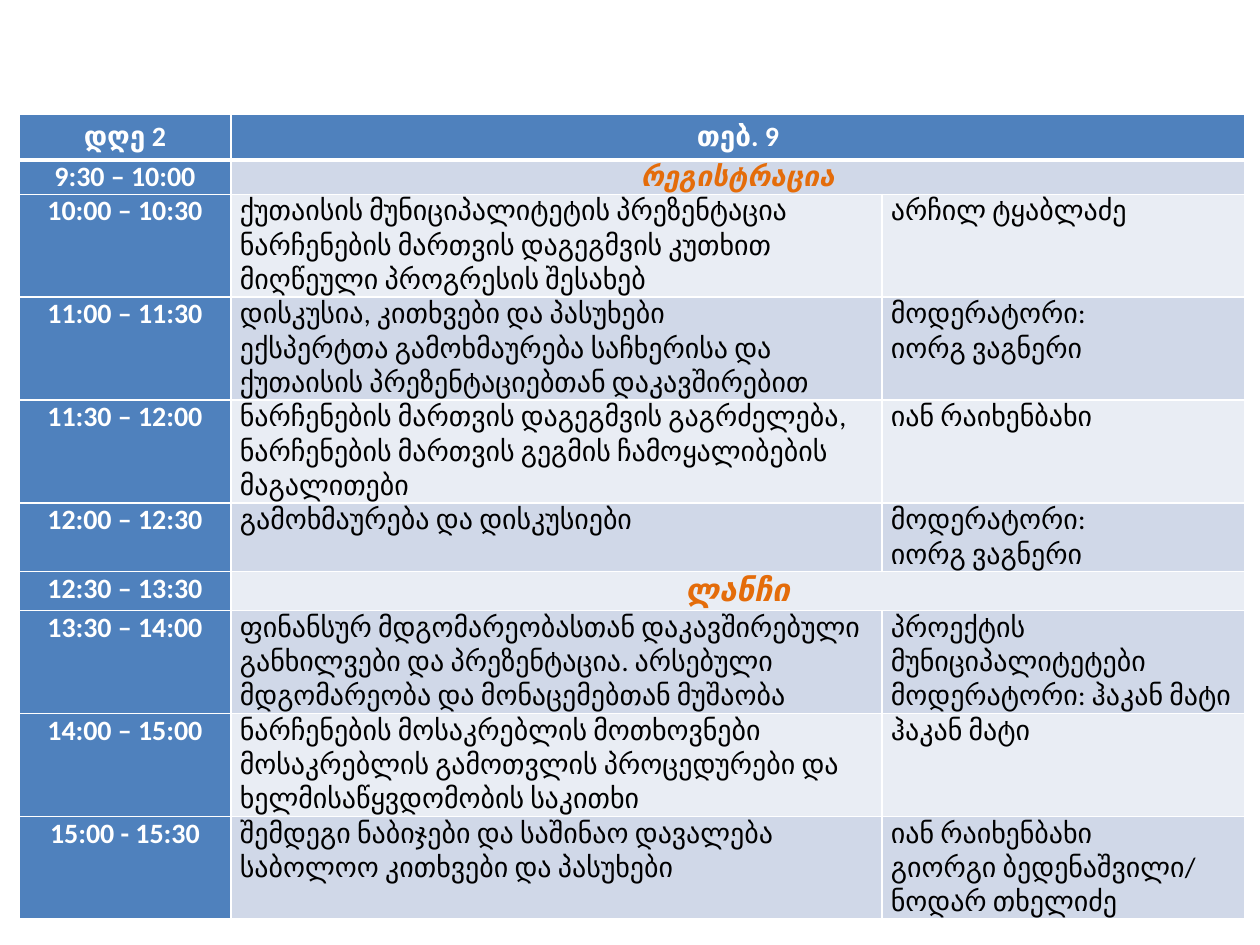
from lxml.etree import SubElement
from pptx import Presentation
from pptx.dml.color import RGBColor
from pptx.enum.text import MSO_ANCHOR, PP_ALIGN
from pptx.oxml.ns import qn
from pptx.util import Emu, Pt

PX = 914400 // 126
COLORS = {
    "header": "4F81BD",
    "odd": "D0D8E8",
    "even": "E9EDF4",
    "white": "FFFFFF",
    "black": "000000",
    "break": "E46C0A",
}
COLUMN_WIDTHS = [212, 651, 363]
HEADER = ("დღე 2", "თებ. 9")
# Row height, time, topic, speaker; a break has no speaker.
AGENDA = [
    (34, "9:30 – 10:00", "რეგისტრაცია", None),
    (103, "10:00 – 10:30",
     "ქუთაისის მუნიციპალიტეტის პრეზენტაცია ნარჩენების მართვის დაგეგმვის კუთხით "
     "მიღწეული პროგრესის შესახებ", "არჩილ ტყაბლაძე"),
    (103, "11:00 – 11:30",
     "დისკუსია, კითხვები და პასუხები\n"
     "ექსპერტთა გამოხმაურება საჩხერისა და ქუთაისის პრეზენტაციებთან დაკავშირებით",
     "მოდერატორი:\nიორგ ვაგნერი"),
    (103, "11:30 – 12:00",
     "ნარჩენების მართვის დაგეგმვის გაგრძელება, ნარჩენების მართვის გეგმის "
     "ჩამოყალიბების მაგალითები", "იან რაიხენბახი"),
    (68, "12:00 – 12:30", "გამოხმაურება და დისკუსიები",
     "მოდერატორი: \vიორგ ვაგნერი"),
    (39, "12:30 – 13:30", "ლანჩი", None),
    (102, "13:30 – 14:00",
     "ფინანსურ მდგომარეობასთან დაკავშირებული განხილვები და პრეზენტაცია. არსებული "
     "მდგომარეობა და მონაცემებთან მუშაობა",
     "პროექტის მუნიციპალიტეტები\vმოდერატორი: ჰაკან მატი"),
    (103, "14:00 – 15:00",
     "ნარჩენების მოსაკრებლის მოთხოვნები მოსაკრებლის გამოთვლის პროცედურები და "
     "ხელმისაწყვდომობის საკითხი", "ჰაკან მატი"),
    (102, "15:00 - 15:30",
     "შემდეგი ნაბიჯები და საშინაო დავალება\nსაბოლოო კითხვები და პასუხები",
     "იან რაიხენბახი\nგიორგი ბედენაშვილი/ ნოდარ თხელიძე"),
]


def rgb(name):
    return RGBColor.from_string(COLORS[name])


class AgendaPage:
    font = "Calibri"
    size = 16

    def __init__(self, page):
        self.page = page

    def table(self, left, top, widths, heights):
        frame = self.page.shapes.add_table(
            len(heights), len(widths), Emu(left * PX), Emu(top * PX),
            Emu(sum(widths) * PX), Emu(sum(heights) * PX))
        for column, width in zip(frame.table.columns, widths):
            column.width = Emu(width * PX)
        for row, height in zip(frame.table.rows, heights):
            row.height = Emu(height * PX)
        return frame.table

    def borders(self, cell, bottom):
        """Must run before the fill, which follows the lines in the cell XML."""
        properties = cell._tc.get_or_add_tcPr()
        for side, width in (("L", 1), ("R", 1), ("T", 1), ("B", bottom)):
            line = SubElement(properties, qn(f"a:ln{side}"), w=str(Pt(width)))
            fill = SubElement(line, qn("a:solidFill"))
            SubElement(fill, qn("a:srgbClr"), val=COLORS["white"])

    def cell(self, cell, text, fill, color="black", bold=False, italic=False,
             align=None, size=None, anchor=MSO_ANCHOR.TOP, bottom=1):
        self.borders(cell, bottom)
        cell.fill.solid()
        cell.fill.fore_color.rgb = rgb(fill)
        cell.margin_left = cell.margin_right = Emu(9 * PX)
        cell.margin_top = cell.margin_bottom = 0
        cell.vertical_anchor = anchor
        paragraphs = text.split("\n")
        for number, line in enumerate(paragraphs):
            frame = cell.text_frame
            para = frame.add_paragraph() if number else frame.paragraphs[0]
            para.text = line
            para.alignment = align
            for span in para.runs:
                span.font.name = self.font
                span.font.size = Pt(size or self.size)
                span.font.bold = bold
                span.font.italic = italic
                span.font.color.rgb = rgb(color)


def main():
    deck = Presentation()
    deck.slide_width, deck.slide_height = Emu(1260 * PX), Emu(945 * PX)
    agenda = AgendaPage(deck.slides.add_slide(deck.slide_layouts[6]))
    heights = [46] + [entry[0] for entry in AGENDA]
    table = agenda.table(19, 114, COLUMN_WIDTHS, heights)

    heading = dict(color="white", bold=True, align=PP_ALIGN.CENTER)
    table.cell(0, 1).merge(table.cell(0, 2))
    for column, text in enumerate(HEADER):
        agenda.cell(table.cell(0, column), text, "header",
                    anchor=MSO_ANCHOR.MIDDLE, bottom=3, **heading)

    for row, (_, time, topic, speaker) in enumerate(AGENDA, start=1):
        band = "odd" if row % 2 else "even"
        agenda.cell(table.cell(row, 0), time, "header", **heading)
        if speaker:
            agenda.cell(table.cell(row, 1), topic, band)
            agenda.cell(table.cell(row, 2), speaker, band)
        else:
            table.cell(row, 1).merge(table.cell(row, 2))
            agenda.cell(table.cell(row, 1), topic, band, "break", bold=True,
                        italic=True, align=PP_ALIGN.CENTER,
                        size=18 if topic == "ლანჩი" else None)
    deck.save("out.pptx")


if __name__ == "__main__":
    main()
